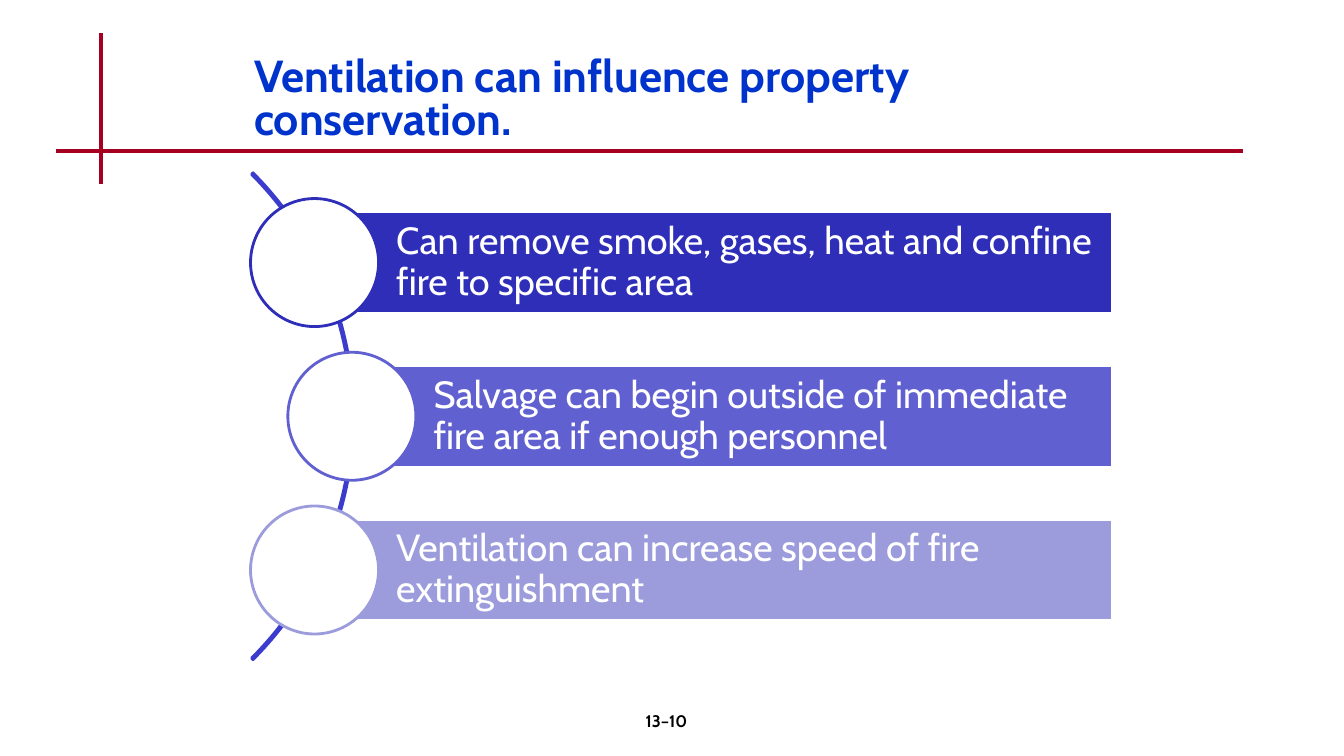
from lxml import etree
from pptx import Presentation
from pptx.dml.color import RGBColor
from pptx.enum.shapes import MSO_CONNECTOR, MSO_SHAPE
from pptx.enum.text import MSO_ANCHOR, PP_ALIGN
from pptx.oxml.ns import qn
from pptx.util import Inches, Pt

FONT = "Cabin"
BENEFITS = [
    ("Can remove smoke, gases, heat and confine fire to specific area", "2E2EB9", 0),
    ("Salvage can begin outside of immediate fire area if enough personnel", "6060D0", 0.37),
    ("Ventilation can increase speed of fire extinguishment", "9C9CDD", 0),
]


def rgb(value):
    return RGBColor.from_string(value)


def style_font(paragraph, size, color, bold=False):
    font = paragraph.font
    font.name, font.size, font.bold = FONT, Pt(size), bold
    font.color.rgb = rgb(color)


def add_rule(slide, x1, y1, x2, y2):
    rule = slide.shapes.add_connector(
        MSO_CONNECTOR.STRAIGHT, Inches(x1), Inches(y1), Inches(x2), Inches(y2))
    rule.line.color.rgb = rgb("A50021")
    rule.line.width = Pt(3)
    etree.SubElement(rule._element.spPr, qn("a:effectLst"))


def add_outlined(slide, preset, left, top, width, height, outline, fill=None):
    shape = slide.shapes.add_shape(
        preset, Inches(left), Inches(top), Inches(width), Inches(height))
    shape.shadow.inherit = False
    if fill:
        shape.fill.solid()
        shape.fill.fore_color.rgb = rgb(fill)
    else:
        shape.fill.background()
    shape.line.color.rgb = rgb(outline)
    shape.line.width = Pt(2)
    return shape


def add_header(slide, left, top, width, height):
    bottom = top + height
    add_rule(slide, 1, bottom - 1.17, 1, bottom + 0.33)
    add_rule(slide, 0.56, bottom, 12.33, bottom)
    title = slide.shapes.title
    title.left, title.top = Inches(left), Inches(top)
    title.width, title.height = Inches(width), Inches(height)
    frame = title.text_frame
    frame.text = "Ventilation can influence property conservation."
    frame.word_wrap = True
    frame.vertical_anchor = MSO_ANCHOR.MIDDLE
    heading = frame.paragraphs[0]
    heading.alignment = PP_ALIGN.LEFT
    heading.line_spacing = 0.8
    style_font(heading, 32, "0033CC", True)


def add_benefit(slide, center_x, center_y, right, text, color):
    bar_height, circle_size = 1.01, 1.27
    bar = add_outlined(slide, MSO_SHAPE.RECTANGLE, center_x, center_y - bar_height / 2,
                       right - center_x, bar_height, "FFFFFF", color)
    frame = bar.text_frame
    frame.text = text
    frame.word_wrap = True
    frame.vertical_anchor = MSO_ANCHOR.MIDDLE
    frame.margin_left = Inches(0.81)
    frame.margin_top = frame.margin_right = frame.margin_bottom = Inches(0.07)
    benefit = frame.paragraphs[0]
    benefit.alignment = PP_ALIGN.LEFT
    benefit.line_spacing = 0.9
    style_font(benefit, 27, "FFFFFF")
    add_outlined(slide, MSO_SHAPE.OVAL, center_x - circle_size / 2,
                 center_y - circle_size / 2, circle_size, circle_size, color, "FFFFFF")


def add_benefit_list(slide, left, middle, right):
    arc_size, pitch = 6.83, 1.525
    arc = add_outlined(slide, MSO_SHAPE.BLOCK_ARC, left - 6.44,
                       middle - arc_size / 2, arc_size, arc_size, "3B3BCD")
    arc.adjustments[0] = 189
    arc.adjustments[1] = 27
    arc.adjustments[2] = 0.003
    for index, (text, color, indent) in enumerate(BENEFITS):
        add_benefit(slide, left + indent, middle + (index - 1) * pitch, right, text, color)


def add_page_number(slide, left, top, width, height):
    box = slide.shapes.add_textbox(Inches(left), Inches(top), Inches(width), Inches(height))
    box.text_frame.word_wrap = True
    number = box.text_frame.paragraphs[0]
    number.text = "13–10"
    number.alignment = PP_ALIGN.CENTER
    style_font(number, 12, "000000", True)


def main():
    deck = Presentation()
    deck.slide_width, deck.slide_height = Inches(13.33), Inches(7.5)
    slide = deck.slides.add_slide(deck.slide_layouts[5])
    add_header(slide, 2.42, 0.5, 8.97, 1)
    add_benefit_list(slide, 3.12, 4.13, 11.03)
    add_page_number(slide, 5.22, 7, 2.78, 0.5)
    deck.save("out.pptx")


if __name__ == "__main__":
    main()
